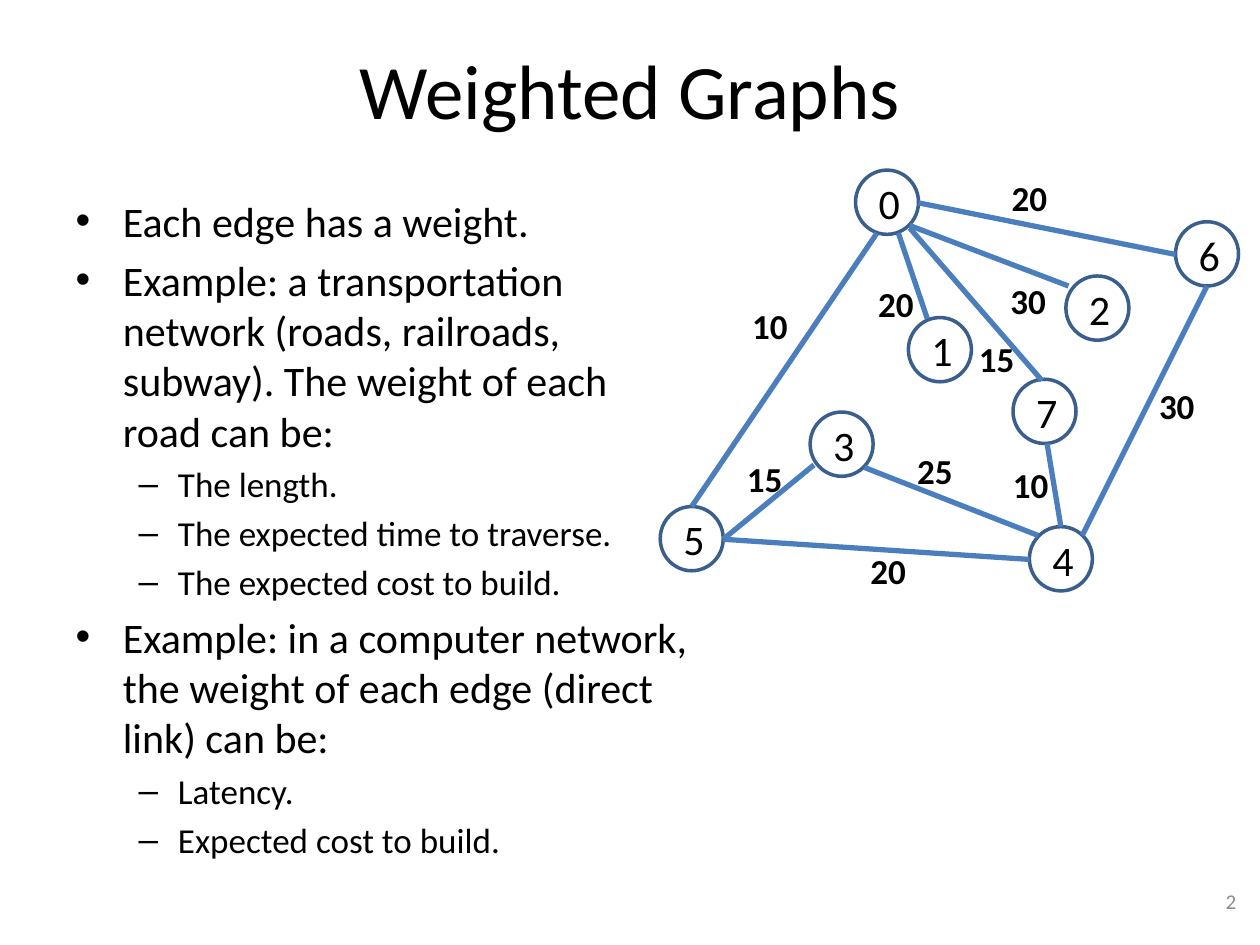
"""Build the Weighted Graphs slide: a bullet list beside a weighted graph."""
from lxml import etree
from pptx import Presentation
from pptx.dml.color import RGBColor
from pptx.enum.shapes import MSO_CONNECTOR, MSO_SHAPE
from pptx.enum.text import MSO_ANCHOR, MSO_AUTO_SIZE, PP_ALIGN
from pptx.oxml.ns import qn
from pptx.util import Inches, Pt

STRAIGHT, OVAL = MSO_CONNECTOR.STRAIGHT, MSO_SHAPE.OVAL
MIDDLE, TOP = MSO_ANCHOR.MIDDLE, MSO_ANCHOR.TOP
LEFT, CENTER, RIGHT = PP_ALIGN.LEFT, PP_ALIGN.CENTER, PP_ALIGN.RIGHT
BLACK = RGBColor(0x00, 0x00, 0x00)
GRAY = RGBColor(0x8C, 0x8C, 0x8C)
NODE_BLUE = RGBColor(0x3A, 0x5F, 0x8C)
EDGE_BLUE = RGBColor(0x4B, 0x7E, 0xBC)

BULLETS = [
    (0, "Each edge has a weight."),
    (0, "Example: a transportation network (roads, railroads, subway). "
        "The weight of each road can be:"),
    (1, "The length."),
    (1, "The expected time to traverse."),
    (1, "The expected cost to build."),
    (0, "Example: in a computer network, the weight of each edge (direct link) can be:"),
    (1, "Latency."),
    (1, "Expected cost to build."),
]
LEVEL_SIZES = [24, 20]
NODES = [
    (0, 6.79, 1.35), (1, 7.21, 2.52), (7, 8.04, 3.01), (2, 8.46, 2.19),
    (5, 5.24, 4.02), (3, 6.43, 3.27), (4, 8.17, 4.18), (6, 9.33, 1.76),
]
EDGES = [
    (7.29, 1.61, 9.33, 2.02), (7.22, 1.79, 8.48, 2.27),
    (7.13, 1.85, 7.36, 2.53), (6.96, 1.85, 5.49, 4.02),
    (7.22, 1.81, 8.27, 3.02), (5.74, 4.28, 6.46, 3.69),
    (5.74, 4.28, 8.17, 4.44), (6.86, 3.71, 8.24, 4.25),
    (8.31, 3.52, 8.42, 4.18), (9.58, 2.27, 8.59, 4.25),
]
WEIGHTS = [
    (10, 5.87, 2.37), (20, 7.93, 1.35), (30, 7.92, 2.17), (20, 6.87, 2.19),
    (15, 7.67, 2.63), (30, 9.1, 3), (10, 7.94, 3.63), (20, 6.81, 4.31),
    (15, 5.83, 3.58), (25, 7.18, 3.52),
]


def style_run(r, size, color=BLACK, bold=False):
    for name, value in {"name": "Calibri", "size": Pt(size), "bold": bold}.items():
        setattr(r.font, name, value)
    r.font.color.rgb = color


def add_label(shapes, text, box, size, align, wrap=True, anchor=TOP, **font):
    tf = shapes.add_textbox(*map(Inches, box)).text_frame
    frame = {"word_wrap": wrap, "vertical_anchor": anchor, "auto_size": MSO_AUTO_SIZE.NONE}
    for name, value in frame.items():
        setattr(tf, name, value)
    p = tf.paragraphs[0]
    p.alignment = align
    r = p.add_run()
    r.text = text
    style_run(r, size, **font)


prs = Presentation()
prs.slide_width, prs.slide_height = Inches(10), Inches(7.5)
s = prs.slides.add_slide(prs.slide_layouts[1])

title, body = s.placeholders
for sp, box in ((title, (0.5, 0.08, 9, 1.25)), (body, (0.5, 1.5, 5.06, 5.5))):
    sp.left, sp.top, sp.width, sp.height = map(Inches, box)

title.text_frame.text = "Weighted Graphs"
style_run(title.text_frame.paragraphs[0].runs[0], 44)

tf = body.text_frame
tf.auto_size = MSO_AUTO_SIZE.NONE
for i, (level, text) in enumerate(BULLETS):
    p = tf.add_paragraph() if i else tf.paragraphs[0]
    p.level = level
    r = p.add_run()
    r.text = text
    style_run(r, LEVEL_SIZES[level])

add_label(s.shapes, "2", (7.58, 6.95, 2.33, 0.4), 12, RIGHT, anchor=MIDDLE, color=GRAY)

graph = s.shapes.add_group_shape().shapes
for number, x, y in NODES:
    node = graph.add_shape(OVAL, Inches(x), Inches(y), Inches(0.5), Inches(0.51))
    node.shadow.inherit = False
    node.fill.background()
    node.line.color.rgb = NODE_BLUE
    node.line.width = Pt(2)
    add_label(graph, f" {number}", (x, y + 0.01, 0.46, 0.5), 24, CENTER)

for points in EDGES:
    edge = graph.add_connector(STRAIGHT, *map(Inches, points))
    edge.line.color.rgb = EDGE_BLUE
    edge.line.width = Pt(3)
    etree.SubElement(edge._element.spPr, qn("a:effectLst"))

for weight, x, y in WEIGHTS:
    add_label(graph, str(weight), (x, y, 0.49, 0.44), 20, LEFT, wrap=False, bold=True)

prs.save("out.pptx")
